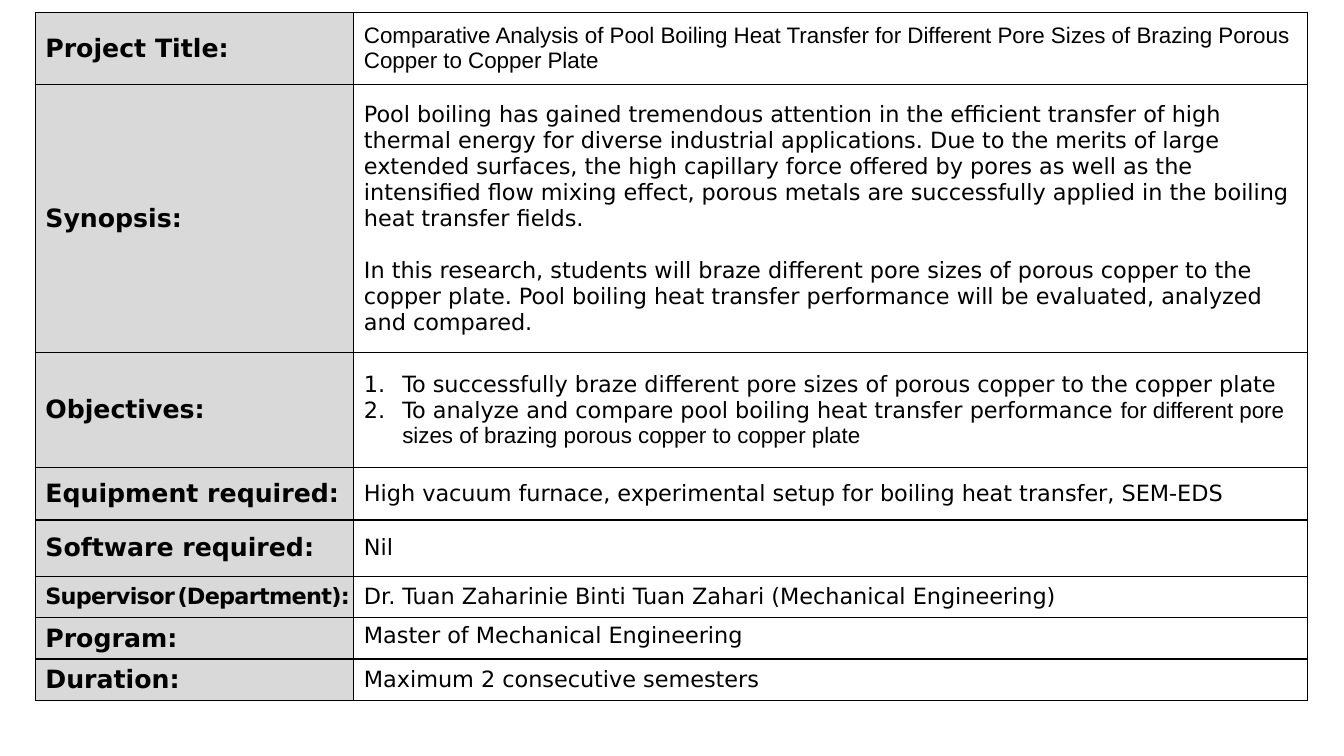
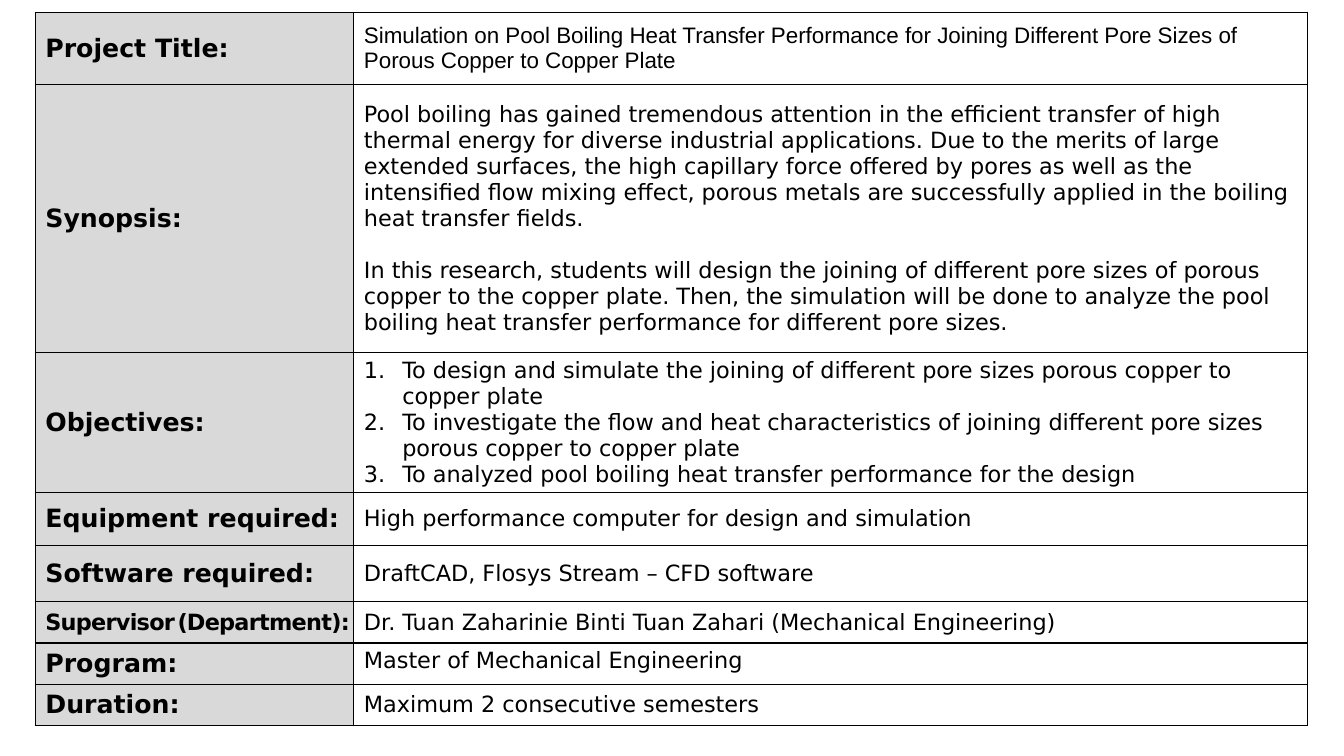
"""Build two project proposal slides, each one a bordered two-column table."""
from dataclasses import dataclass

from lxml import etree
from pptx import Presentation, util as u
from pptx.dml import color
from pptx.enum import text
from pptx.oxml import ns


@dataclass(frozen=True)
class Theme:
    ink: str = "000000"
    label_fill: str = "D9D9D9"
    font: str = "DejaVu Sans"
    title_font: str = "Arial"
    label_size: float = 18
    body_size: float = 16
    gap_size: float = 5
    paragraph_gap: float = 18.6
    tight: float = -0.5
    border: float = 1


@dataclass(frozen=True)
class Span:
    words: str
    size: float
    font: str
    bold: bool = False
    spacing: float = 0


THEME = Theme()
PX = 9144
SLIDE_SIZE = (1333, 750)
TABLE_ORIGIN = (35, 12)
COLUMNS = (316, 946)
HEADING_ROWS = (72, 266)
DETAIL_ROWS = (52, 56, 41, 41, 41)
LIST_INDENT = 38

BACKGROUND = (
    "Pool boiling has gained tremendous attention in the efficient transfer of high "
    "thermal energy for diverse industrial applications. Due to the merits of large "
    "extended surfaces, the high capillary force offered by pores as well as the "
    "intensified flow mixing effect, porous metals are successfully applied in the "
    "boiling heat transfer fields."
)


def px(length):
    return u.Emu(round(length * PX))


def body(words, font=THEME.font):
    return Span(words, THEME.body_size, font)


def label(words):
    return Span(words, THEME.label_size, THEME.font, True)


def tight_label(words, size=THEME.body_size):
    return Span(words, size, THEME.font, True, THEME.tight)


LABELS = (
    [label("Project Title:")],
    [label("Synopsis:")],
    [label("Objectives:")],
    [label("Equipment required:")],
    [label("Software required:")],
    [tight_label("Supervisor"), tight_label(" ", THEME.gap_size), tight_label("(Department):")],
    [label("Program:")],
    [label("Duration:")],
)
SUPERVISOR_ROW, PROGRAM_ROW = 5, 6
OBJECTIVES_ROW = 2

SHARED_DETAILS = [
    [[body("Dr. Tuan Zaharinie Binti Tuan Zahari (Mechanical Engineering)")]],
    [[body("Master of Mechanical Engineering")]],
    [[body("Maximum 2 consecutive semesters")]],
]

PROJECTS = (
    {
        "title": "Comparative Analysis of Pool Boiling Heat Transfer for Different Pore "
                 "Sizes of Brazing Porous Copper to Copper Plate",
        "research": "In this research, students will braze different pore sizes of porous "
                    "copper to the copper plate. Pool boiling heat transfer performance "
                    "will be evaluated, analyzed and compared.",
        "objectives": [
            [body("To successfully braze different pore sizes of porous copper to the "
                  "copper plate")],
            [body("To analyze and compare pool boiling heat transfer performance "),
             body("for different pore sizes of brazing porous copper to copper plate",
                  THEME.title_font)],
        ],
        "objectives_height": 114,
        "equipment": "High vacuum furnace, experimental setup for boiling heat transfer, "
                     "SEM-EDS",
        "software": "Nil",
    },
    {
        "title": "Simulation on Pool Boiling Heat Transfer Performance for Joining "
                 "Different Pore Sizes of Porous Copper to Copper Plate",
        "research": "In this research, students will design the joining of different pore "
                    "sizes of porous copper to the copper plate. Then, the simulation will "
                    "be done to analyze the pool boiling heat transfer performance for "
                    "different pore sizes.",
        "objectives": [
            [body("To design and simulate the joining of different pore sizes porous "
                  "copper to copper plate")],
            [body("To investigate the flow and heat characteristics of joining different "
                  "pore sizes porous copper to copper plate")],
            [body("To analyzed pool boiling heat transfer performance for the design")],
        ],
        "objectives_height": 139,
        "equipment": "High performance computer for design and simulation",
        "software": "DraftCAD, Flosys Stream – CFD software",
    },
)


def add_span(para, span):
    run = para.add_run()
    run.text = span.words
    run.font.name = span.font
    run.font.size = u.Pt(span.size)
    run.font.bold = span.bold
    run.font.color.rgb = color.RGBColor.from_string(THEME.ink)
    if span.spacing:
        run.font._element.set("spc", str(round(span.spacing * 100)))


def number_paragraph(para):
    properties = para._p.get_or_add_pPr()
    properties.set("marL", str(px(LIST_INDENT)))
    properties.set("indent", str(px(-LIST_INDENT)))
    etree.SubElement(properties, ns.qn("a:buAutoNum"), type="arabicPeriod")


def add_borders(cell):
    properties = cell._tc.get_or_add_tcPr()
    for side in ("lnL", "lnR", "lnT", "lnB"):
        line = etree.SubElement(properties, ns.qn(f"a:{side}"), w=str(u.Pt(THEME.border)))
        paint = etree.SubElement(line, ns.qn("a:solidFill"))
        etree.SubElement(paint, ns.qn("a:srgbClr"), val=THEME.ink)


def fill_cell(cell, paragraphs, fill=None, numbered=False):
    add_borders(cell)
    if fill:
        cell.fill.solid()
        cell.fill.fore_color.rgb = color.RGBColor.from_string(fill)
    else:
        cell.fill.background()
    cell.vertical_anchor = text.MSO_ANCHOR.MIDDLE
    frame = cell.text_frame
    for index, spans in enumerate(paragraphs):
        para = frame.add_paragraph() if index else frame.paragraphs[0]
        if numbered:
            number_paragraph(para)
        elif index:
            para.space_before = u.Pt(THEME.paragraph_gap)
        for span in spans:
            add_span(para, span)


def project_details(project):
    return [
        [[body(project["title"], THEME.title_font)]],
        [[body(BACKGROUND)], [body(project["research"])]],
        project["objectives"],
        [[body(project["equipment"])]],
        [[body(project["software"])]],
        *SHARED_DETAILS,
    ]


def add_project_page(deck, project):
    page = deck.slides.add_slide(deck.slide_layouts[6])
    heights = (*HEADING_ROWS, project["objectives_height"], *DETAIL_ROWS)
    bounds = (*TABLE_ORIGIN, sum(COLUMNS), sum(heights))
    table = page.shapes.add_table(len(heights), len(COLUMNS), *map(px, bounds)).table
    table.first_row = table.horz_banding = False
    for column, width in zip(table.columns, COLUMNS):
        column.width = px(width)
    for row, height in zip(table.rows, heights):
        row.height = px(height)
    for index, (spans, details) in enumerate(zip(LABELS, project_details(project))):
        fill_cell(table.cell(index, 0), [spans], THEME.label_fill)
        fill_cell(table.cell(index, 1), details, numbered=index == OBJECTIVES_ROW)
    table.cell(SUPERVISOR_ROW, 0).margin_right = 0
    table.cell(PROGRAM_ROW, 1).vertical_anchor = text.MSO_ANCHOR.TOP


def main():
    deck = Presentation()
    deck.slide_width, deck.slide_height = map(px, SLIDE_SIZE)
    for project in PROJECTS:
        add_project_page(deck, project)
    deck.save("out.pptx")


if __name__ == "__main__":
    main()
